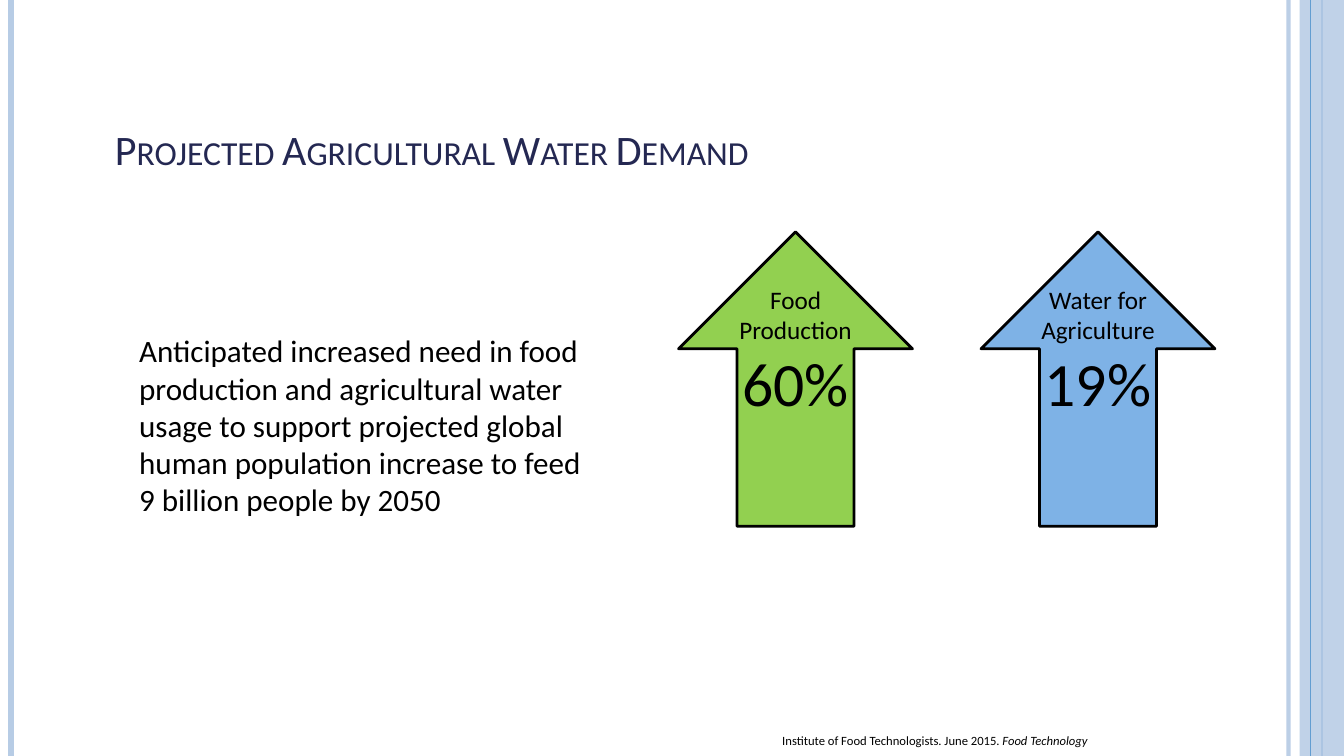
from lxml import etree
from pptx import Presentation
from pptx.dml.color import RGBColor
from pptx.enum.shapes import MSO_CONNECTOR, MSO_SHAPE
from pptx.enum.text import MSO_ANCHOR, MSO_AUTO_SIZE, PP_ALIGN
from pptx.oxml.ns import qn
from pptx.util import Inches, Pt

STRAIGHT = MSO_CONNECTOR.STRAIGHT
RECTANGLE = MSO_SHAPE.RECTANGLE
UP_ARROW = MSO_SHAPE.UP_ARROW
BOTTOM = MSO_ANCHOR.BOTTOM
TOP = MSO_ANCHOR.TOP
FIT_SHAPE = MSO_AUTO_SIZE.SHAPE_TO_FIT_TEXT
NO_FIT = MSO_AUTO_SIZE.NONE
LEFT = PP_ALIGN.LEFT
CENTER = PP_ALIGN.CENTER

FONT = "Calibri"
BLACK = "000000"
PALE_BLUE = "B7CCE5"
MID_BLUE = "629DD1"


def rgb(hex_code):
    return RGBColor.from_string(hex_code)


def set_opacity(element, percent):
    color = element.find(".//" + qn("a:srgbClr"))
    etree.SubElement(color, qn("a:alpha")).set("val", str(percent * 1000))


prs = Presentation()
prs.slide_width = Inches(13.33)
prs.slide_height = Inches(7.5)
slide = prs.slides.add_slide(prs.slide_layouts[1])
shapes = slide.shapes

band = shapes.add_shape(RECTANGLE, Inches(12.89), 0, Inches(0.44), Inches(7.5))
band.shadow.inherit = False
band.fill.solid()
band.fill.fore_color.rgb = rgb(PALE_BLUE)
band.line.fill.background()
set_opacity(band._element, 87)

for x, color, weight, opacity in [
    (12.78, PALE_BLUE, 3, 93),
    (0.11, PALE_BLUE, 4.5, 100),
    (13.11, MID_BLUE, 1.5, 100),
    (13, MID_BLUE, 0.75, 100),
]:
    stripe = shapes.add_connector(STRAIGHT, Inches(x), 0, Inches(x), Inches(7.5))
    stripe.line.color.rgb = rgb(color)
    stripe.line.width = Pt(weight)
    if opacity < 100:
        set_opacity(stripe._element, opacity)
    etree.SubElement(stripe._element.spPr, qn("a:effectLst"))
    if x == 13.11:
        band._element.addprevious(stripe._element)

title = shapes.title
title.left, title.top = Inches(1.04), Inches(0.79)
title.width, title.height = Inches(7.74), Inches(0.99)
title.text_frame.vertical_anchor = BOTTOM
title.text_frame.auto_size = NO_FIT
heading = title.text_frame.paragraphs[0]
heading.alignment = LEFT
heading_run = heading.add_run()
heading_run.text = "Projected Agricultural Water Demand"
heading_run._r.get_or_add_rPr().set("cap", "small")
heading.font.name = FONT
heading.font.size = Pt(30)
heading.font.color.rgb = rgb("242852")

body = slide.placeholders[1]
body.left, body.top = Inches(1.28), Inches(3.24)
body.width, body.height = Inches(4.58), Inches(1.98)
body.text_frame.vertical_anchor = TOP
body.text_frame.auto_size = NO_FIT
body.text_frame.text = (
    "Anticipated increased need in food production and agricultural water "
    "usage to support projected global human population increase to feed "
    "9 billion people by 2050"
)
statement = body.text_frame.paragraphs[0]
statement.space_before = Pt(0)
statement_format = statement._p.get_or_add_pPr()
statement_format.set("marL", "0")
statement_format.set("indent", "0")
etree.SubElement(statement_format, qn("a:buNone"))
statement.font.name = FONT
statement.font.size = Pt(22.2)
statement.font.color.rgb = rgb(BLACK)

citation_box = shapes.add_textbox(Inches(7.66), Inches(7.21), Inches(3.31), Inches(0.26))
citation_box.text_frame.word_wrap = False
citation_box.text_frame.auto_size = FIT_SHAPE
citation = citation_box.text_frame.paragraphs[0]
citation.line_spacing = 1.07
citation.space_after = Pt(8)
citation.font.name = FONT
citation.font.size = Pt(9)
citation.font.color.rgb = rgb(BLACK)
citation.add_run().text = "Institute of Food Technologists. June 2015. "
journal = citation.add_run()
journal.text = "Food Technology"
journal.font.italic = True

for x, color, demand, increase in [
    (6.73, "92D050", "Food Production ", "60%"),
    (9.73, "7EB2E6", "Water for Agriculture ", "19%"),
]:
    arrow = shapes.add_shape(UP_ARROW, Inches(x), Inches(2.3), Inches(2.32), Inches(2.92))
    arrow.shadow.inherit = False
    arrow.fill.solid()
    arrow.fill.fore_color.rgb = rgb(color)
    arrow.line.color.rgb = rgb(BLACK)
    arrow.line.width = Pt(2)

    label = shapes.add_textbox(Inches(x + 0.35), Inches(2.77), Inches(1.62), Inches(1.45))
    label.text_frame.word_wrap = True
    label.text_frame.auto_size = FIT_SHAPE
    caption = label.text_frame.paragraphs[0]
    caption.alignment = CENTER
    caption.space_after = Pt(6)
    caption.font.name = FONT
    caption.font.color.rgb = rgb(BLACK)
    for text, size in [(demand, 18), (increase, 44)]:
        run = caption.add_run()
        run.text = text
        run.font.size = Pt(size)

prs.save("out.pptx")
